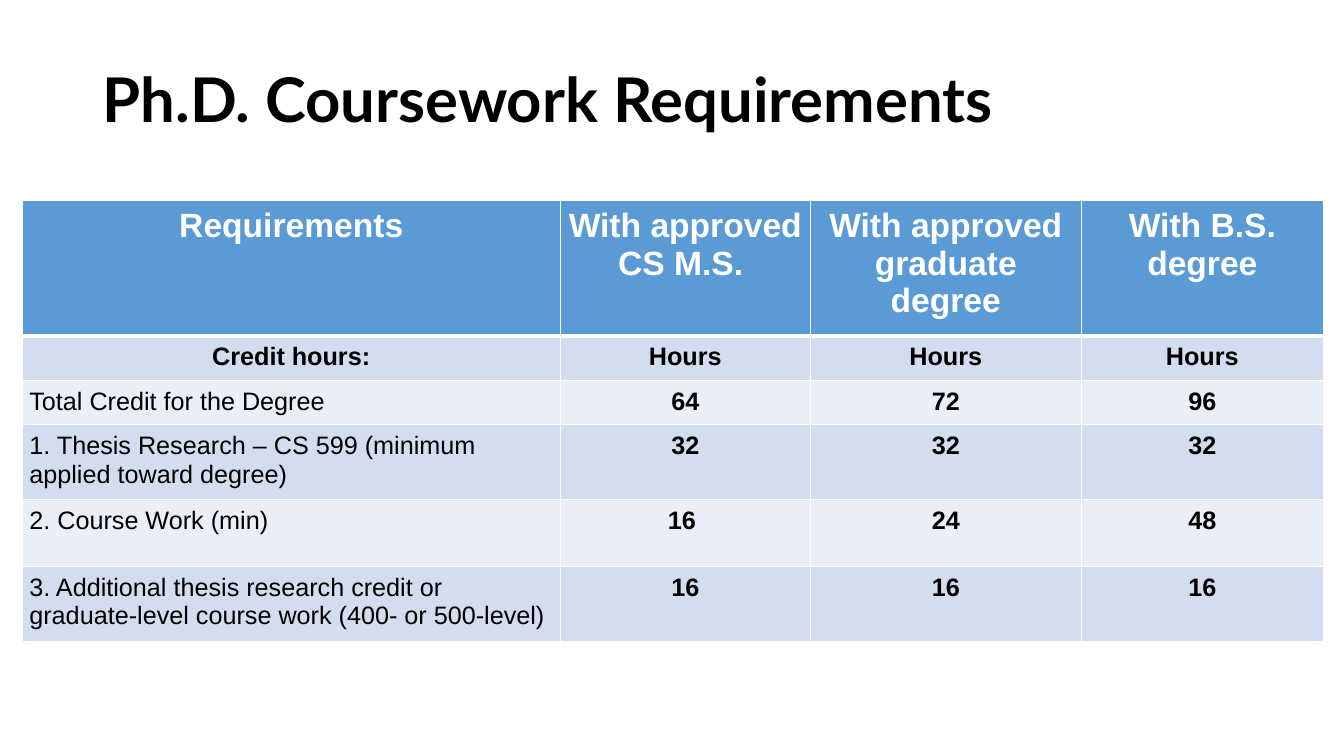
from dataclasses import dataclass

from lxml import etree
from pptx import Presentation
from pptx.dml.color import RGBColor
from pptx.enum.text import MSO_ANCHOR, PP_ALIGN
from pptx.util import Cm, Pt

CENTER = PP_ALIGN.CENTER
LEFT = PP_ALIGN.LEFT
MIDDLE = MSO_ANCHOR.MIDDLE
BLANK_LAYOUT = 6
DRAWING = "http://schemas.openxmlformats.org/drawingml/2006/main"


@dataclass
class Theme:
    ink: str = "000000"
    paper: str = "FFFFFF"
    header: str = "5B9BD5"
    bands: tuple = ("D2DEEF", "EAEFF7")
    title_font: str = "Lato"
    table_font: str = "Arial"
    title_size: int = 44
    header_size: int = 24
    body_size: int = 18
    row_spacing: int = 12


theme = Theme()


def write(frame, text, *, font, size, color, bold=True, align=LEFT, spacing=0, line=1.0):
    para = frame.paragraphs[0]
    para.alignment = align
    para.space_before = para.space_after = Pt(spacing)
    para.line_spacing = line
    span = para.add_run()
    span.text = text
    span.font.name = font
    span.font.size = Pt(size)
    span.font.bold = bold
    span.font.color.rgb = RGBColor.from_string(color)


def add_border(cell, side, width):
    properties = cell._tc.get_or_add_tcPr()
    border = etree.SubElement(properties, f"{{{DRAWING}}}ln{side}", w=str(Pt(width)))
    fill = etree.SubElement(border, f"{{{DRAWING}}}solidFill")
    etree.SubElement(fill, f"{{{DRAWING}}}srgbClr", val=theme.paper)


deck = Presentation()
deck.slide_width = Cm(33.87)
deck.slide_height = Cm(19.05)
page = deck.slides.add_slide(deck.slide_layouts[BLANK_LAYOUT])

title_box = page.shapes.add_textbox(Cm(2.34), Cm(0.74), Cm(29.21), Cm(3.68))
title_box.text_frame.word_wrap = True
title_box.text_frame.vertical_anchor = MIDDLE
write(title_box.text_frame, "Ph.D. Coursework Requirements", font=theme.title_font,
      size=theme.title_size, color=theme.ink, line=0.9)

requirements = [
    ("Requirements", "With approved CS M.S. ", "With approved graduate degree", "With B.S. degree"),
    ("Credit hours:", "Hours", "Hours", "Hours"),
    ("Total Credit for the Degree", "64", "72", "96"),
    ("1. Thesis Research – CS 599 (minimum applied toward degree)", "32", "32", "32"),
    ("2. Course Work (min)", "16 ", "24", "48"),
    ("3. Additional thesis research credit or graduate-level course work (400- or 500-level)",
     "16", "16", "16"),
]
column_widths = [13.56, 6.3, 6.83, 6.1]
row_heights = [3.05, 0.99, 0.99, 1.68, 1.68, 1.68]

table = page.shapes.add_table(
    len(row_heights), len(column_widths), Cm(0.56), Cm(5.05),
    Cm(sum(column_widths)), Cm(sum(row_heights))).table
for column, width in zip(table.columns, column_widths):
    column.width = Cm(width)
for row, height in zip(table.rows, row_heights):
    row.height = Cm(height)

for row_index, texts in enumerate(requirements):
    is_header = row_index == 0
    is_heading = row_index < 2
    for column_index, text in enumerate(texts):
        is_label = column_index == 0 and not is_heading
        is_spaced = is_heading or (row_index == 2 and is_label)
        cell = table.cell(row_index, column_index)
        cell.margin_left = cell.margin_right = Cm(0.18)
        cell.margin_top = cell.margin_bottom = Cm(0.18)
        for side in "LRTB":
            add_border(cell, side, 3 if is_header and side == "B" else 1)
        cell.fill.solid()
        cell.fill.fore_color.rgb = RGBColor.from_string(
            theme.header if is_header else theme.bands[(row_index - 1) % 2])
        write(cell.text_frame, text, font=theme.table_font,
              size=theme.header_size if is_header else theme.body_size,
              color=theme.paper if is_header else theme.ink,
              bold=not is_label, align=LEFT if is_label else CENTER,
              spacing=theme.row_spacing if is_spaced else 0)

deck.save("out.pptx")
